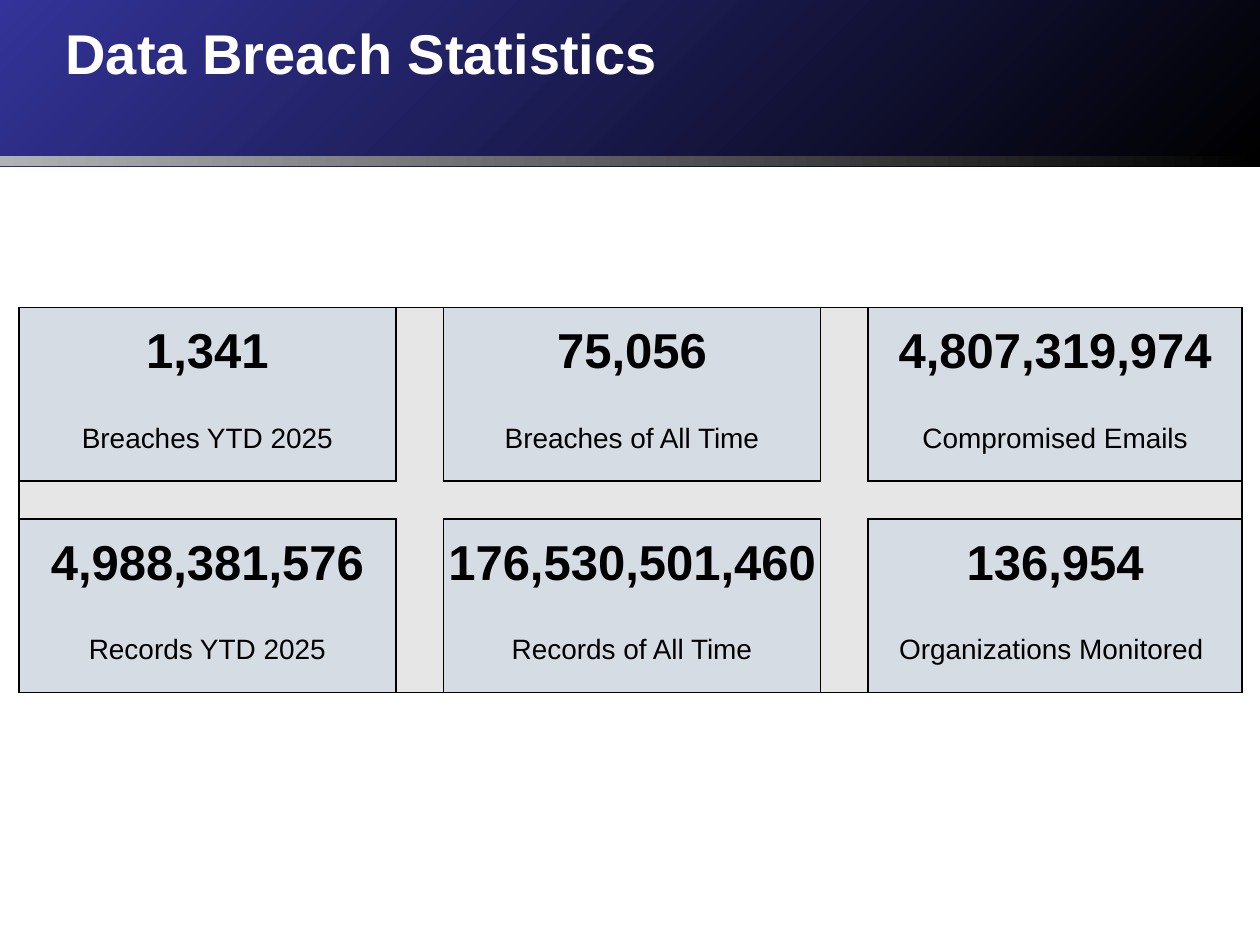
import lxml.etree
import pptx
import pptx.dml.color
import pptx.enum.shapes
import pptx.enum.text
import pptx.oxml.ns
import pptx.util

Cm = pptx.util.Cm
Pt = pptx.util.Pt
RGBColor = pptx.dml.color.RGBColor
qn = pptx.oxml.ns.qn

NAVY = RGBColor(0x33, 0x33, 0x99)
SILVER = RGBColor(0xB2, 0xB2, 0xB2)
BLACK = RGBColor(0, 0, 0)
WHITE = RGBColor(255, 255, 255)
CARD = RGBColor(0xD6, 0xDC, 0xE4)
GUTTER = RGBColor(0xE7, 0xE6, 0xE6)

STATISTICS = [
    [("1,341", "Breaches YTD 2025"),
     ("75,056", "Breaches of All Time"),
     ("4,807,319,974", "Compromised Emails")],
    [("4,988,381,576", "Records YTD 2025"),
     ("176,530,501,460", "Records of All Time"),
     ("136,954", "Organizations Monitored ")],
]
COLUMN_WIDTHS = [7.6, 0.96, 7.6, 0.96, 7.54]
ROW_HEIGHTS = [1.75, 1.75, 0.76, 1.75, 1.75]
SIDES = {"a:lnL": (0, -1), "a:lnR": (0, 1), "a:lnT": (-1, 0), "a:lnB": (1, 0)}


class StatisticsPage:
    """Draws the elements of the statistics slide in one shared style."""

    def __init__(self, page, font_name="Arial"):
        self.page = page
        self.font_name = font_name

    def style(self, para, size, color, bold):
        font = para.font
        font.name, font.size, font.bold = self.font_name, Pt(size), bold
        font.color.rgb = color

    def gradient_bar(self, top, height, start, angle):
        bar = self.page.shapes.add_shape(
            pptx.enum.shapes.MSO_SHAPE.RECTANGLE, 0, Cm(top), Cm(25.4), Cm(height))
        bar.shadow.inherit = False
        bar.line.fill.background()
        bar.fill.gradient()
        bar.fill.gradient_angle = angle
        for stop, color, position in zip(bar.fill.gradient_stops, (start, BLACK), (0, 1)):
            stop.color.rgb = color
            stop.position = position

    def title(self, text):
        box = self.page.shapes.add_textbox(Cm(1.07), Cm(0.25), Cm(23.06), Cm(2.54))
        box.text_frame.word_wrap = True
        para = box.text_frame.paragraphs[0]
        span = para.add_run()
        span.text = text
        self.style(para, 32, WHITE, True)
        effects = lxml.etree.SubElement(span.font._element, qn("a:effectLst"))
        shadow = lxml.etree.SubElement(
            effects, qn("a:outerShdw"), dist="38100", dir="2700000", algn="tl")
        lxml.etree.SubElement(shadow, qn("a:srgbClr"), val=str(BLACK))

    def border(self, cell, side, visible):
        properties = cell._tc.get_or_add_tcPr()
        line = lxml.etree.SubElement(properties, qn(side), w=str(Pt(1)))
        if visible:
            fill = lxml.etree.SubElement(line, qn("a:solidFill"))
            lxml.etree.SubElement(fill, qn("a:srgbClr"), val=str(BLACK))
        else:
            lxml.etree.SubElement(line, qn("a:noFill"))

    def cell(self, cell, text, size, bold, fill, visible_sides):
        cell.margin_left = cell.margin_right = cell.margin_top = Cm(0.03)
        cell.margin_bottom = 0
        cell.vertical_anchor = pptx.enum.text.MSO_ANCHOR.MIDDLE
        for side in SIDES:
            self.border(cell, side, side in visible_sides)
        cell.fill.solid()
        cell.fill.fore_color.rgb = fill
        para = cell.text_frame.paragraphs[0]
        para.alignment = pptx.enum.text.PP_ALIGN.CENTER
        if text:
            para.add_run().text = text
        self.style(para, size, BLACK, bold)

    def table(self, left, top):
        table = self.page.shapes.add_table(
            len(ROW_HEIGHTS), len(COLUMN_WIDTHS), Cm(left), Cm(top),
            Cm(sum(COLUMN_WIDTHS)), Cm(sum(ROW_HEIGHTS))).table
        table.first_row = table.horz_banding = False
        for column, width in zip(table.columns, COLUMN_WIDTHS):
            column.width = Cm(width)
        for row, height in zip(table.rows, ROW_HEIGHTS):
            row.height = Cm(height)
        for row in range(len(ROW_HEIGHTS)):
            for column in range(len(COLUMN_WIDTHS)):
                tone = cell_tone(row, column)
                visible = [side for side, (down, right) in SIDES.items()
                           if cell_tone(row + down, column + right) != tone]
                band, part = divmod(row, 3)
                text = STATISTICS[band][column // 2][part] if tone == CARD else ""
                is_value = tone == CARD and part == 0
                self.cell(table.cell(row, column), text, 28 if is_value else 16,
                          is_value, tone, visible)


def cell_tone(row, column):
    if not (0 <= row < len(ROW_HEIGHTS) and 0 <= column < len(COLUMN_WIDTHS)):
        return None
    return GUTTER if row == 2 or column % 2 else CARD


def main():
    deck = pptx.Presentation()
    deck.slide_width, deck.slide_height = Cm(25.4), Cm(19.05)
    page = StatisticsPage(deck.slides.add_slide(deck.slide_layouts[6]))
    page.gradient_bar(0, 3.35, NAVY, 315)
    page.gradient_bar(3.15, 0.2, SILVER, 0)
    page.title("Data Breach Statistics")
    page.table(0.38, 6.2)
    deck.save("out.pptx")


if __name__ == "__main__":
    main()
